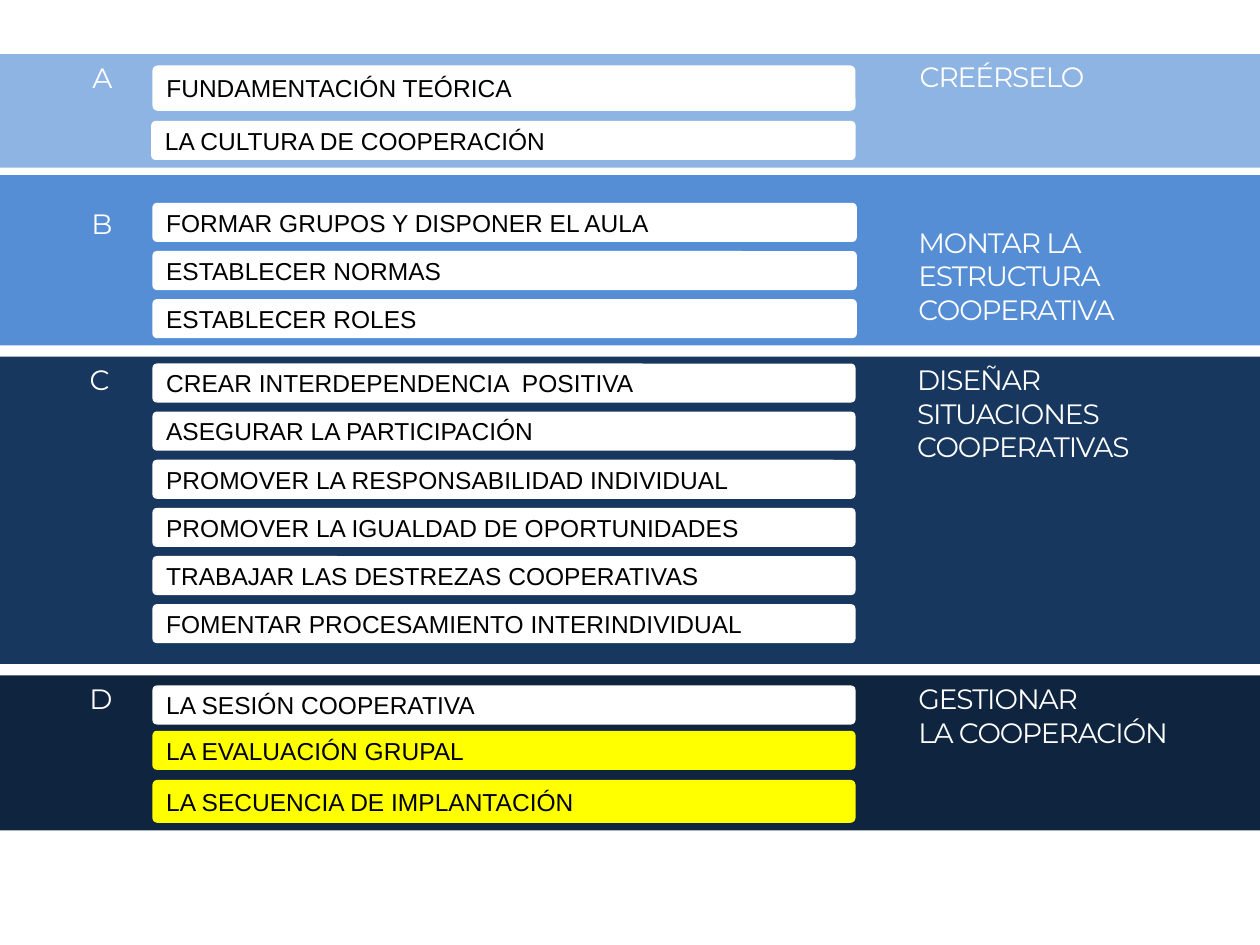
import pptx
import pptx.dml.color
import pptx.enum.shapes
import pptx.enum.text
import pptx.util

SHAPES = pptx.enum.shapes.MSO_SHAPE
ALIGN = pptx.enum.text.PP_ALIGN
COLUMNS, ROWS = 100, 75
PITCH = 3.82
BAR_HEIGHT = 3.1


def colour(hex_code):
    """Return the colour for a hex string."""
    return pptx.dml.color.RGBColor.from_string(hex_code)


def evenly(first, count):
    """Return the tops of equally spaced bars."""
    return [first + PITCH * step for step in range(count)]


class Scheme:
    """Draw bands, bars and labels on a grid of 100 columns by 75 rows."""

    def __init__(self, deck):
        """Add the slide and keep the size of a grid cell."""
        self.slide = deck.slides.add_slide(deck.slide_layouts[6])
        self.column = deck.slide_width / COLUMNS
        self.row = deck.slide_height / ROWS

    def box(self, left, top, width, height):
        """Turn grid units into slide lengths."""
        return (round(left * self.column), round(top * self.row),
                round(width * self.column), round(height * self.row))

    def block(self, kind, place, fill, rounding):
        """Add a filled shape without outline or shadow."""
        block = self.slide.shapes.add_shape(kind, *self.box(*place))
        block.shadow.inherit = False
        block.adjustments[0] = rounding
        block.fill.solid()
        block.fill.fore_color.rgb = colour(fill)
        block.line.fill.background()
        return block

    def styled_run(self, paragraph, words, font, size, ink):
        """Add one styled run to a paragraph."""
        run = paragraph.add_run()
        run.text = words
        run.font.name = font
        run.font.size = pptx.util.Pt(size)
        run.font.color.rgb = colour(ink)
        return run

    def band(self, top, height, fill):
        """Add a full-width background band."""
        self.block(SHAPES.ROUNDED_RECTANGLE, (-3.5, top, 105.8, height), fill, 0)

    def bar(self, top, words, fill="FFFFFF", height=BAR_HEIGHT, left=12.1, width=55.8):
        """Add a topic bar with its text."""
        bar = self.block(SHAPES.DOUBLE_BRACKET, (left, top, width, height), fill, 0.113)
        frame = bar.text_frame
        frame.word_wrap = True
        frame.vertical_anchor = pptx.enum.text.MSO_ANCHOR.MIDDLE
        frame.margin_right = pptx.util.Inches(0.24)
        paragraph = frame.paragraphs[0]
        paragraph.alignment = ALIGN.LEFT
        self.styled_run(paragraph, words, "Arial", 14, "000000")

    def label(self, place, lines, alignment=ALIGN.LEFT):
        """Add white band text, one paragraph for each line."""
        frame = self.slide.shapes.add_textbox(*self.box(*place)).text_frame
        frame.word_wrap = True
        for index, words in enumerate(lines):
            paragraph = frame.add_paragraph() if index else frame.paragraphs[0]
            paragraph.alignment = alignment
            run = self.styled_run(paragraph, words, "Montserrat", 16, "FFFFFF")
            run._r.get_or_add_rPr().set("spc", "-60")

    def letter(self, top, name, right=9.9):
        """Add the letter of a band at its left."""
        self.label((right - 13.4, top, 13.4, 3.7), [name], ALIGN.RIGHT)


def main():
    """Build and save the slide."""
    deck = pptx.Presentation()
    deck.slide_width = pptx.util.Inches(10)
    deck.slide_height = pptx.util.Inches(7.5)
    scheme = Scheme(deck)

    scheme.band(4.3, 9, "8EB4E3")
    scheme.letter(4.3, "A")
    scheme.label((72, 4.2, 21.1, 8), ["CREÉRSELO"])
    scheme.bar(5.2, "FUNDAMENTACIÓN TEÓRICA", height=3.6)
    scheme.bar(9.6, "LA CULTURA DE COOPERACIÓN", left=12, width=55.9)

    scheme.band(13.9, 13.5, "558ED5")
    scheme.letter(15.9, "B")
    scheme.label((71.9, 17.4, 21.1, 9.4), ["MONTAR LA", "ESTRUCTURA", "COOPERATIVA"])
    structure = ["FORMAR GRUPOS Y DISPONER EL AULA", "ESTABLECER NORMAS", "ESTABLECER ROLES"]
    for top, topic in zip(evenly(16.1, len(structure)), structure):
        scheme.bar(top, topic, width=55.9)

    scheme.band(28.3, 24.4, "17375E")
    scheme.letter(28.3, "C", right=9.7)
    scheme.label((71.8, 28.3, 25.6, 9.1), ["DISEÑAR", "SITUACIONES", "COOPERATIVAS"])
    situations = [
        "CREAR INTERDEPENDENCIA  POSITIVA",
        "ASEGURAR LA PARTICIPACIÓN",
        "PROMOVER LA RESPONSABILIDAD INDIVIDUAL",
        "PROMOVER LA IGUALDAD DE OPORTUNIDADES",
        "TRABAJAR LAS DESTREZAS COOPERATIVAS",
        "FOMENTAR PROCESAMIENTO INTERINDIVIDUAL",
    ]
    for top, topic in zip(evenly(28.85, len(situations)), situations):
        scheme.bar(top, topic)

    scheme.band(53.6, 12.3, "0F243E")
    scheme.letter(53.6, "D")
    scheme.label((71.9, 53.6, 30.3, 6.4), ["GESTIONAR", "LA COOPERACIÓN"])
    scheme.bar(54.4, "LA SESIÓN COOPERATIVA")
    scheme.bar(58, "LA EVALUACIÓN GRUPAL", fill="FFFF00")
    scheme.bar(61.9, "LA SECUENCIA DE IMPLANTACIÓN", fill="FFFF00", height=3.4)

    deck.save("out.pptx")


if __name__ == "__main__":
    main()
